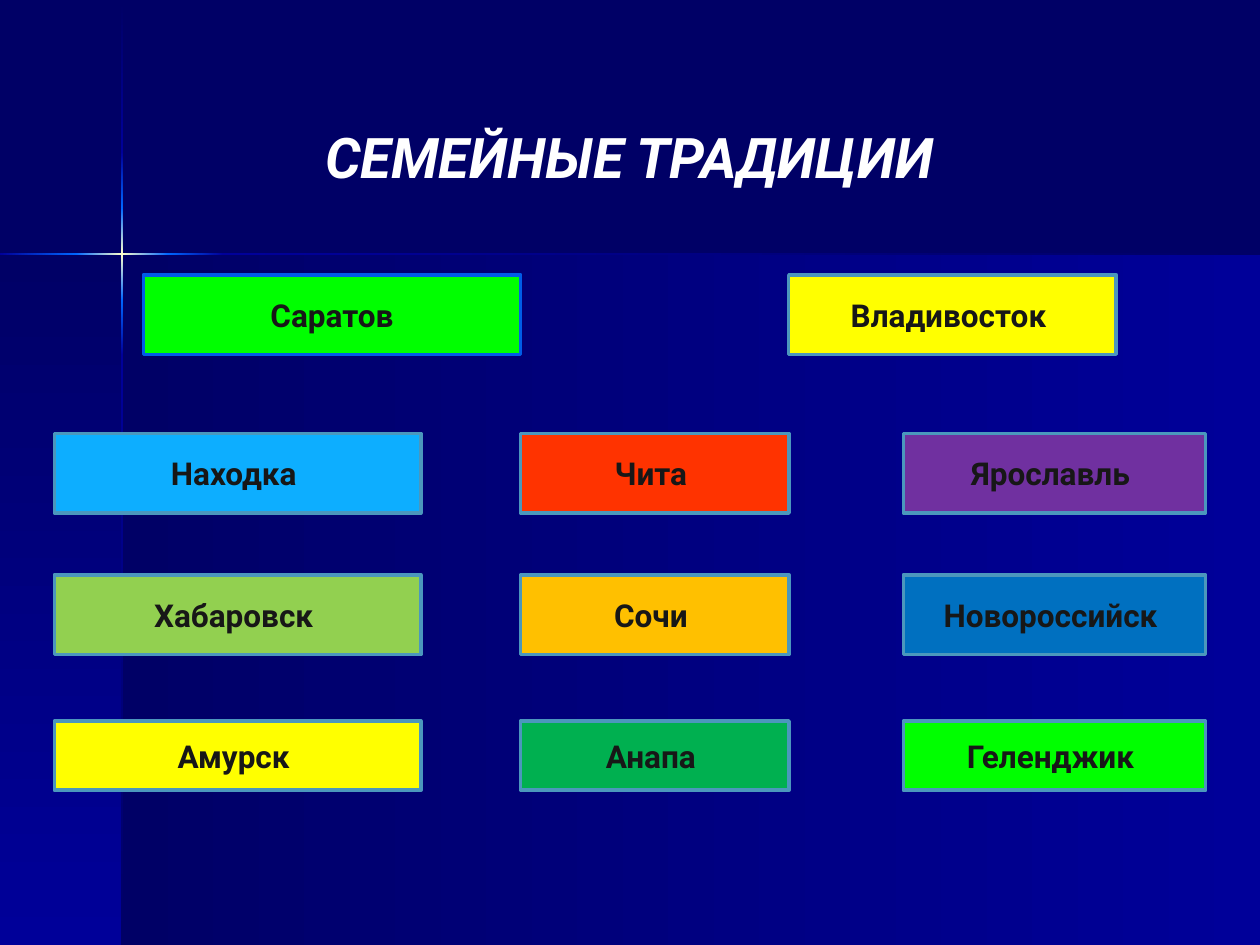
import pptx
import pptx.dml.color
import pptx.enum.shapes
import pptx.enum.text
import pptx.oxml
import pptx.oxml.ns
import pptx.util
from lxml import etree

Pt = pptx.util.Pt
CENTER = pptx.enum.text.PP_ALIGN.CENTER
NAVY, BLUE, BRIGHT, CREAM = "000066", "000099", "0066FF", "FFFFCC"


def color(value):
    return pptx.dml.color.RGBColor.from_string(value)


def add_rectangle(slide, left, top, width, height):
    shape = slide.shapes.add_shape(
        pptx.enum.shapes.MSO_SHAPE.RECTANGLE, Pt(left), Pt(top), Pt(width), Pt(height))
    shape.shadow.inherit = False
    return shape


presentation = pptx.Presentation()
presentation.slide_width, presentation.slide_height = Pt(720), Pt(540)
slide = presentation.slides.add_slide(presentation.slide_layouts[1])
slide.background.fill.solid()
slide.background.fill.fore_color.rgb = color(NAVY)

# Backdrop panels and the glowing cross: left, top, width, height, downward, colours
glow = [BRIGHT, CREAM, BRIGHT]
backdrop = [
    (70, 145.5, 650, 394.5, False, [NAVY, BLUE]),
    (0, 145.5, 70, 394.5, True, [NAVY, BLUE]),
    (69.2, 0.5, 1.3, 86.5, True, [NAVY, BLUE]),
    (69.2, 203, 1.3, 337, True, [BLUE, NAVY]),
    (127.5, 144.6, 592.5, 1.3, False, [BLUE, NAVY]),
    (69.2, 171.5, 1.3, 31.5, True, [BRIGHT, BLUE]),
    (69.2, 87, 1.3, 32, True, [BLUE, BRIGHT]),
    (69.2, 119, 1.3, 52.5, True, glow),
    (0, 144.6, 43.5, 1.3, False, [BLUE, BRIGHT]),
    (96, 144.6, 31.5, 1.3, False, [BRIGHT, BLUE]),
    (43.5, 144.6, 52.5, 1.3, False, glow),
]
for left, top, width, height, downward, colors in backdrop:
    panel = add_rectangle(slide, left, top, width, height)
    panel.line.fill.background()
    panel.fill.gradient()
    panel.fill.gradient_angle = 270 if downward else 0
    stops = next(panel.element.iter(pptx.oxml.ns.qn("a:gsLst")))
    for stop in list(stops):
        stops.remove(stop)
    for index, value in enumerate(colors):
        stop = etree.SubElement(stops, pptx.oxml.ns.qn("a:gs"),
                                pos=str(100000 * index // (len(colors) - 1)))
        etree.SubElement(stop, pptx.oxml.ns.qn("a:srgbClr"), val=value)

# Heading in the body placeholder, brought in front of the backdrop
title, body = slide.placeholders[0], slide.placeholders[1]
title.element.getparent().remove(title.element)
slide.shapes.element.append(body.element)
body.left, body.top, body.width, body.height = Pt(31), Pt(66.2), Pt(657.5), Pt(414)
body.text_frame.text = "СЕМЕЙНЫЕ ТРАДИЦИИ"
paragraph = body.text_frame.paragraphs[0]
paragraph.alignment = CENTER
properties = paragraph.runs[0].font
properties.name, properties.size = "Roboto", Pt(32)
properties.bold = properties.italic = True
properties.color.rgb = color("FFFFFF")
paragraph_properties = paragraph._p.get_or_add_pPr()
paragraph_properties.set("marL", "0")
paragraph_properties.set("indent", "0")
etree.SubElement(paragraph_properties, pptx.oxml.ns.qn("a:buNone"))

# City boxes: two on top, then a grid of three by three
boxes = [
    (82, 157, 215.5, 45.5, "Саратов", "00FF00", "005CE7"),
    (450.7, 157, 187.2, 45.5, "Владивосток ", "FFFF00", "4B97BD"),
]
columns = [(31, 209.5), (297.5, 153.4), (516.2, 172.8)]
rows = [
    (247.7, 45.5, [("Находка ", "0DAEFF"), ("Чита ", "FF3300"), ("Ярославль ", "7030A0")]),
    (328.5, 45.5, [("Хабаровск ", "92D050"), ("Сочи ", "FFC000"), ("Новороссийск ", "0070C0")]),
    (412, 39.6, [("Амурск ", "FFFF00"), ("Анапа ", "00B050"), ("Геленджик ", "00FF00")]),
]
for top, height, cities in rows:
    for (left, width), (city, fill) in zip(columns, cities):
        boxes.append((left, top, width, height, city, fill, "4B97BD"))

for left, top, width, height, city, fill, outline in boxes:
    box = add_rectangle(slide, left, top, width, height)
    box.fill.solid()
    box.fill.fore_color.rgb = color(fill)
    box.line.color.rgb = color(outline)
    box.line.width = Pt(2)
    box.text_frame.text = city
    box.text_frame.word_wrap = True
    box.text_frame.vertical_anchor = pptx.enum.text.MSO_ANCHOR.MIDDLE
    paragraph = box.text_frame.paragraphs[0]
    paragraph.alignment = CENTER
    font = paragraph.runs[0].font
    font.name, font.size, font.bold = "Roboto", Pt(18), True
    font.color.rgb = color("171717")

presentation.save("out.pptx")
